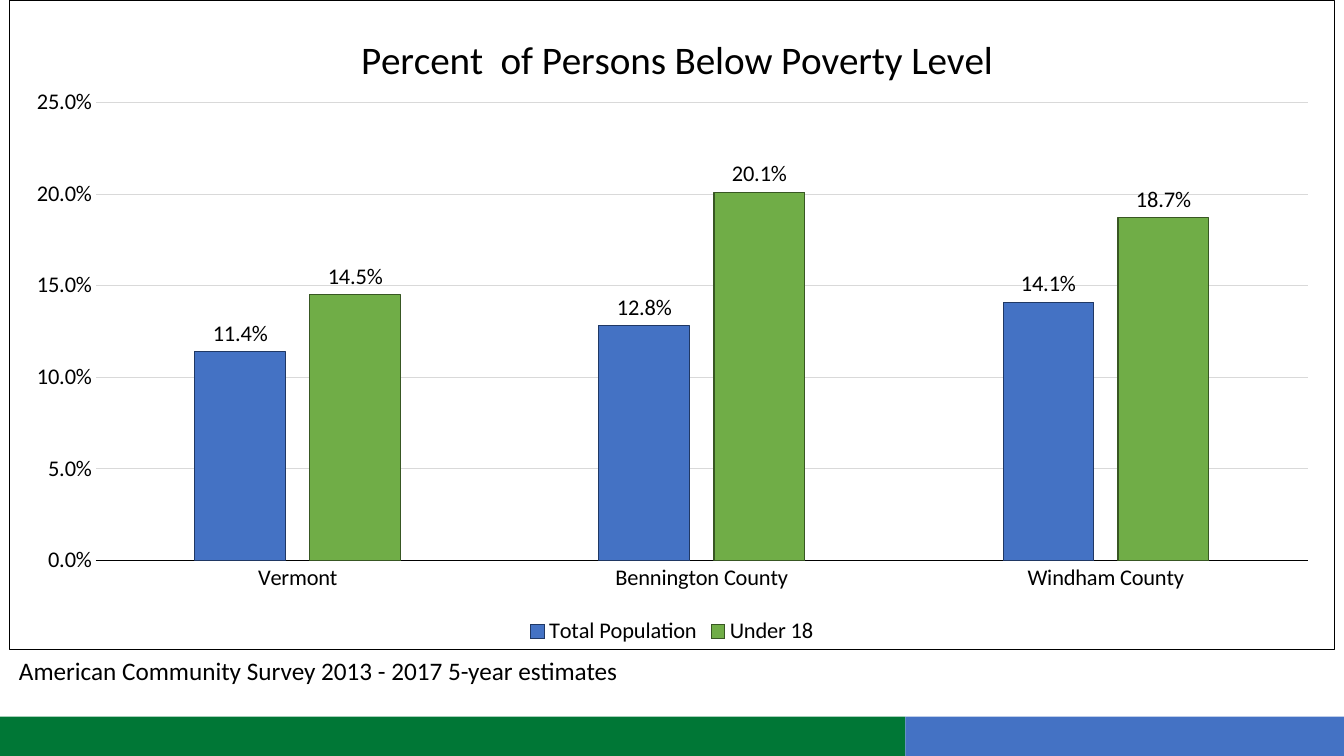
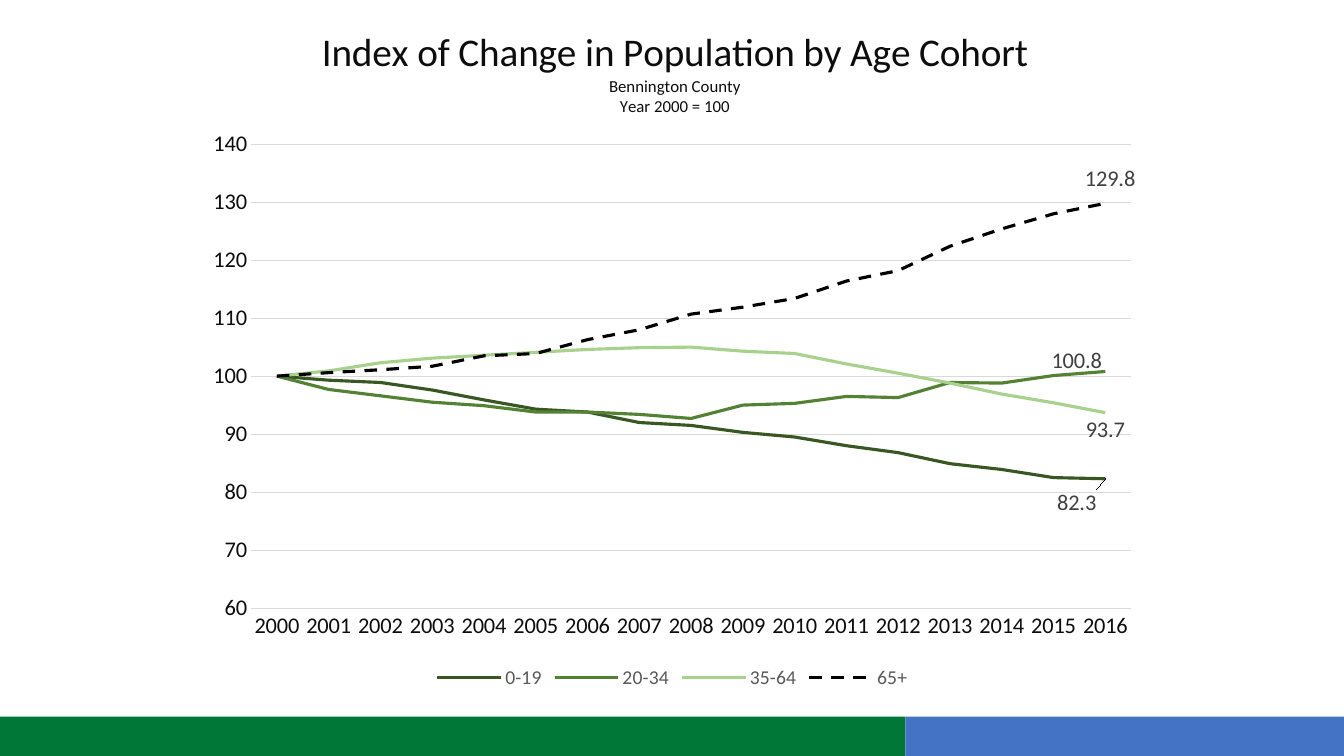
"""Build two chart slides on poverty and population change in Bennington County."""
from dataclasses import dataclass

from lxml.etree import SubElement
from pptx import Presentation
from pptx.chart.data import CategoryChartData
from pptx.dml.color import RGBColor
from pptx.enum.chart import XL_CHART_TYPE as ChartType
from pptx.enum.chart import XL_LABEL_POSITION as LabelPos
from pptx.enum.chart import XL_LEGEND_POSITION as LegendPos
from pptx.enum.chart import XL_TICK_MARK as TickMark
from pptx.enum.dml import MSO_LINE_DASH_STYLE as Dash
from pptx.enum.shapes import MSO_SHAPE as Preset
from pptx.enum.text import MSO_AUTO_SIZE as AutoSize
from pptx.oxml.ns import qn
from pptx.util import Inches, Pt

FONT = "Calibri"
COLORS = {
    "black": "000000", "white": "FFFFFF", "ink": "0D0D0D",
    "label": "404040", "legend": "595959", "grid": "D9D9D9",
    "band green": "007736", "blue": "4472C4", "navy": "203864",
    "green": "70AD47", "dark green": "385723",
    "mid green": "548235", "light green": "A9D18E",
}


@dataclass(frozen=True)
class Band:
    left: float
    width: float
    color: str


@dataclass(frozen=True)
class TitleLine:
    text: str
    size: int


@dataclass(frozen=True)
class Measure:
    name: str
    values: tuple[float, ...]
    color: str
    outline: str


@dataclass(frozen=True)
class Cohort:
    name: str
    values: tuple[float, ...]
    color: str
    label_pos: LabelPos
    label_shift: tuple[float, float] | None = None
    dash: Dash = Dash.SOLID


@dataclass(frozen=True)
class ChartSpec:
    kind: ChartType
    box: tuple[float, float, float, float]
    title: tuple[TitleLine, ...]
    title_at: tuple[float, float]
    plot_area: tuple[float, float, float, float]
    categories: tuple[str, ...]
    series: tuple
    value_format: str
    axis_format: str
    scale: tuple[float, float, float]
    text_color: str
    axis_line: str
    legend_size: int
    legend_color: str


BANDS = (Band(0, 8.98, "band green"), Band(8.98, 4.35, "blue"))

POVERTY = ChartSpec(
    kind=ChartType.COLUMN_CLUSTERED,
    box=(0.09, 0, 13.15, 6.45),
    title=(TitleLine("Percent  of Persons Below Poverty Level", 28),),
    title_at=(0.26, 0.04),
    plot_area=(0.065, 0.157, 0.915, 0.706),
    categories=("Vermont", "Bennington County", "Windham County"),
    series=(
        Measure("Total Population", (0.114, 0.128, 0.141), "blue", "navy"),
        Measure("Under 18", (0.145, 0.201, 0.187), "green", "dark green"),
    ),
    value_format="0.0%", axis_format="0.0%", scale=(0, 0.25, 0.05),
    text_color="black", axis_line="black",
    legend_size=16, legend_color="black",
)

POPULATION = ChartSpec(
    kind=ChartType.LINE,
    box=(1.93, 0, 9.48, 6.88),
    title=(
        TitleLine("Index of Change in Population by Age Cohort", 28),
        TitleLine("Bennington County", 12),
        TitleLine("Year 2000 = 100", 12),
    ),
    title_at=(0.13, 0.035),
    plot_area=(0.059, 0.208, 0.921, 0.669),
    categories=tuple(str(year) for year in range(2000, 2017)),
    series=(
        Cohort("0-19", (100, 99.3, 98.9, 97.6, 95.9, 94.3, 93.8, 92.0, 91.5,
                        90.3, 89.5, 88.0, 86.8, 84.9, 83.9, 82.5, 82.3),
               "dark green", LabelPos.BELOW, (-0.03, 0.01)),
        Cohort("20-34", (100, 97.7, 96.6, 95.5, 94.9, 93.8, 93.8, 93.4, 92.7,
                         95.0, 95.3, 96.5, 96.3, 98.9, 98.8, 100.1, 100.8),
               "mid green", LabelPos.ABOVE, (-0.03, 0.01)),
        Cohort("35-64", (100, 100.9, 102.3, 103.1, 103.6, 104.1, 104.6, 104.9,
                         105.0, 104.3, 103.9, 102.1, 100.5, 98.8, 96.9, 95.4,
                         93.7),
               "light green", LabelPos.BELOW),
        Cohort("65+", (100, 100.6, 101.1, 101.7, 103.5, 103.9, 106.3, 108.0,
                       110.7, 111.9, 113.4, 116.4, 118.2, 122.4, 125.4, 128.0,
                       129.8),
               "black", LabelPos.ABOVE, (0.005, -0.01), Dash.DASH),
    ),
    value_format="0.0", axis_format="0", scale=(60, 140, 10),
    text_color="ink", axis_line="grid",
    legend_size=14, legend_color="legend",
)


def rgb(color: str) -> RGBColor:
    return RGBColor.from_string(COLORS[color])


def style_font(font, size: int, color: str) -> None:
    font.name = FONT
    font.size = Pt(size)
    font.bold = False
    font.color.rgb = rgb(color)


def style_line(line, color: str, width: float = 0.75) -> None:
    line.color.rgb = rgb(color)
    line.width = Pt(width)


def set_layout(parent, index: int, settings: dict) -> None:
    for existing in parent.findall(qn("c:layout")):
        parent.remove(existing)
    layout = parent.makeelement(qn("c:layout"), {})
    manual = SubElement(layout, qn("c:manualLayout"))
    for tag, value in settings.items():
        SubElement(manual, qn(f"c:{tag}")).set("val", str(value))
    parent.insert(index, layout)


def add_bands(layout, slide) -> None:
    for band in BANDS:
        strip = slide.shapes.add_shape(
            Preset.RECTANGLE, Inches(band.left), Inches(7.11),
            Inches(band.width), Inches(0.39))
        strip.shadow.inherit = False
        strip.fill.solid()
        strip.fill.fore_color.rgb = rgb(band.color)
        strip.line.fill.background()
        layout.shapes.element.append(strip.element)


def style_axes(chart, spec: ChartSpec) -> None:
    for axis in (chart.category_axis, chart.value_axis):
        axis.major_tick_mark = axis.minor_tick_mark = TickMark.NONE
        style_font(axis.tick_labels.font, 16, spec.text_color)
    style_line(chart.category_axis.format.line, spec.axis_line)
    values = chart.value_axis
    values.minimum_scale, values.maximum_scale, values.major_unit = spec.scale
    values.format.line.fill.background()
    values.has_major_gridlines = True
    style_line(values.major_gridlines.format.line, "grid")
    values.tick_labels.number_format = spec.axis_format
    values.tick_labels.number_format_is_linked = False


def add_titled_chart(slide, spec: ChartSpec):
    data = CategoryChartData(number_format=spec.value_format)
    data.categories = spec.categories
    for entry in spec.series:
        data.add_series(entry.name, entry.values)
    box = [Inches(length) for length in spec.box]
    chart = slide.shapes.add_chart(spec.kind, *box, data).chart
    style_font(chart.font, 12, spec.text_color)
    chart.plots[0].vary_by_categories = False

    chart.has_title = True
    frame = chart.chart_title.text_frame
    for index, line in enumerate(spec.title):
        paragraph = frame.add_paragraph() if index else frame.paragraphs[0]
        run = paragraph.add_run()
        run.text = line.text
        style_font(run.font, line.size, spec.text_color)
    chart.chart_title.include_in_layout = False
    x, y = spec.title_at
    set_layout(chart.element.xpath("c:chart/c:title")[0], 1,
               {"xMode": "edge", "yMode": "edge", "x": x, "y": y})
    x, y, w, h = spec.plot_area
    set_layout(chart.element.xpath("c:chart/c:plotArea")[0], 0,
               {"layoutTarget": "inner", "xMode": "edge", "yMode": "edge",
                "x": x, "y": y, "w": w, "h": h})

    style_axes(chart, spec)
    chart.has_legend = True
    chart.legend.position = LegendPos.BOTTOM
    chart.legend.include_in_layout = False
    style_font(chart.legend.font, spec.legend_size, spec.legend_color)
    return chart


def frame_chart(chart) -> None:
    plot_root = chart.element.find(qn("c:chart"))
    frame = plot_root.makeelement(qn("c:spPr"), {})
    fill = SubElement(frame, qn("a:solidFill"))
    SubElement(fill, qn("a:srgbClr")).set("val", COLORS["white"])
    border = SubElement(frame, qn("a:ln"))
    border.set("w", str(Pt(0.75)))
    border_fill = SubElement(border, qn("a:solidFill"))
    SubElement(border_fill, qn("a:srgbClr")).set("val", COLORS["black"])
    plot_root.addnext(frame)


def style_columns(chart, spec: ChartSpec) -> None:
    plot = chart.plots[0]
    plot.gap_width = 219
    plot.overlap = -27
    for column, measure in zip(plot.series, spec.series):
        column.format.fill.solid()
        column.format.fill.fore_color.rgb = rgb(measure.color)
        style_line(column.format.line, measure.outline)
        labels = column.data_labels
        labels.show_value = True
        labels.number_format = spec.value_format
        labels.number_format_is_linked = False
        labels.position = LabelPos.OUTSIDE_END
        style_font(labels.font, 16, spec.text_color)


def style_cohorts(chart, spec: ChartSpec) -> None:
    for curve, cohort in zip(chart.plots[0].series, spec.series):
        curve.smooth = False
        style_line(curve.format.line, cohort.color, 2.25)
        curve.format.line.dash_style = cohort.dash
        last = curve.points[len(cohort.values) - 1].data_label
        style_font(last.font, 16, "label")
        last.position = cohort.label_pos
    for label, cohort in zip(chart.element.xpath(".//c:dLbl"), spec.series):
        if cohort.label_shift:
            x, y = cohort.label_shift
            set_layout(label, 1, {"x": x, "y": y})


def add_source_note(slide, text: str) -> None:
    note = slide.shapes.add_textbox(
        Inches(0.09), Inches(6.45), Inches(6.87), Inches(0.4))
    note.text_frame.word_wrap = True
    note.text_frame.auto_size = AutoSize.SHAPE_TO_FIT_TEXT
    run = note.text_frame.paragraphs[0].add_run()
    run.text = text
    style_font(run.font, 18, "black")


def main() -> None:
    deck = Presentation()
    deck.slide_width, deck.slide_height = Inches(13.33), Inches(7.5)
    layout = deck.slide_layouts[6]

    poverty_slide = deck.slides.add_slide(layout)
    add_bands(layout, poverty_slide)
    poverty = add_titled_chart(poverty_slide, POVERTY)
    frame_chart(poverty)
    style_columns(poverty, POVERTY)
    add_source_note(poverty_slide,
                    "American Community Survey 2013 - 2017 5-year estimates")

    population_slide = deck.slides.add_slide(layout)
    population = add_titled_chart(population_slide, POPULATION)
    style_cohorts(population, POPULATION)
    deck.save("out.pptx")


if __name__ == "__main__":
    main()
